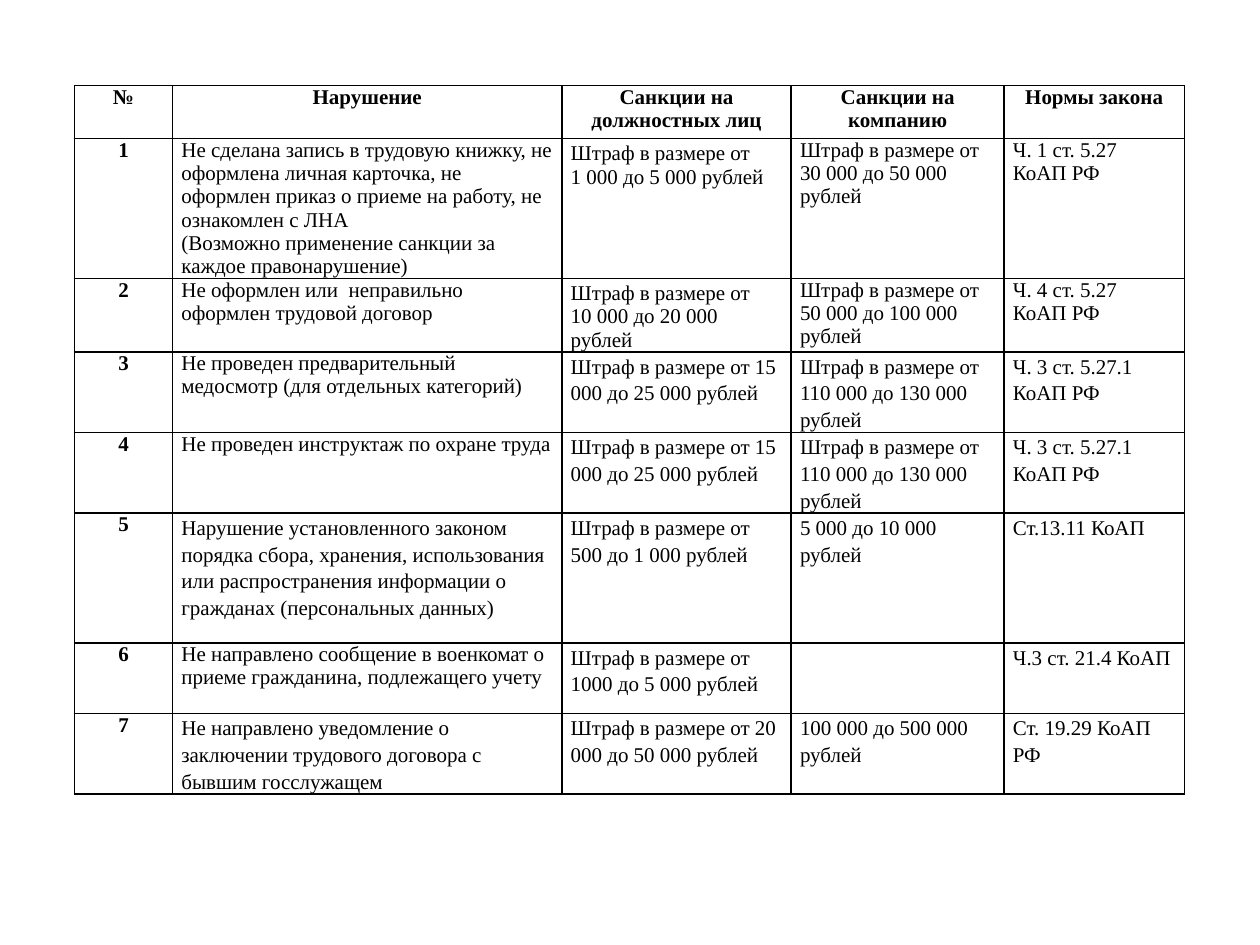
from dataclasses import dataclass

import pptx
import pptx.dml.color
import pptx.enum.text
import pptx.oxml
import pptx.oxml.ns
import pptx.util
from pptx.util import Inches

BLACK = pptx.dml.color.RGBColor(0x00, 0x00, 0x00)
FONT = "Times New Roman"
FONT_SIZE = pptx.util.Pt(12)
LOOSE_SPACING = 1.15
BORDER = pptx.util.Pt(1)
CENTER = pptx.enum.text.PP_ALIGN.CENTER

HEADERS = ("№", "Нарушение", "Санкции на должностных лиц",
           "Санкции на компанию", "Нормы закона")
COLUMN_WIDTHS = (0.78, 3.09, 1.82, 1.69, 1.43)
HEADER_HEIGHT = 0.42

# Columns whose first paragraph has the wider line spacing
OFFICIALS_ONLY = (2,)
SANCTIONS_AND_LAW = (2, 3, 4)
ALL_TEXT = (1, 2, 3, 4)


@dataclass(frozen=True)
class Violation:
    height: float
    loose_columns: tuple[int, ...]
    description: str
    officials: str
    company: str
    law: str


VIOLATIONS = (
    Violation(1.11, OFFICIALS_ONLY,
              "Не сделана запись в трудовую книжку, не оформлена личная карточка, "
              "не оформлен приказ о приеме на работу, не ознакомлен с ЛНА\n"
              "(Возможно применение санкции за каждое правонарушение)",
              "Штраф в размере от\n1 000 до 5 000 рублей",
              "Штраф в размере от 30 000 до 50 000 рублей",
              "Ч. 1 ст. 5.27 КоАП РФ"),
    Violation(0.58, OFFICIALS_ONLY,
              "Не оформлен или  неправильно оформлен трудовой договор",
              "Штраф в размере от\n10 000 до 20 000 рублей",
              "Штраф в размере от 50 000 до 100 000 рублей",
              "Ч. 4 ст. 5.27 КоАП РФ"),
    Violation(0.64, SANCTIONS_AND_LAW,
              "Не проведен предварительный медосмотр (для отдельных категорий)",
              "Штраф в размере от 15 000 до 25 000 рублей",
              "Штраф в размере от 110 000 до 130 000 рублей",
              "Ч. 3 ст. 5.27.1 КоАП РФ"),
    Violation(0.64, SANCTIONS_AND_LAW,
              "Не проведен инструктаж по охране труда",
              "Штраф в размере от 15 000 до 25 000 рублей",
              "Штраф в размере от 110 000 до 130 000 рублей",
              "Ч. 3 ст. 5.27.1 КоАП РФ"),
    Violation(1.03, ALL_TEXT,
              "Нарушение установленного законом порядка сбора, хранения, использования "
              "или распространения информации о гражданах (персональных данных)",
              "Штраф в размере от 500 до 1 000 рублей",
              "5 000 до 10 000 рублей",
              "Ст.13.11 КоАП"),
    Violation(0.56, SANCTIONS_AND_LAW,
              "Не направлено сообщение в военкомат о приеме гражданина, подлежащего учету",
              "Штраф в размере от 1000 до 5 000 рублей",
              "",
              "Ч.3 ст. 21.4 КоАП"),
    Violation(0.64, ALL_TEXT,
              "Не направлено уведомление о заключении трудового договора "
              "с бывшим госслужащем",
              "Штраф в размере от 20 000 до 50 000 рублей",
              "100 000 до 500 000 рублей",
              "Ст. 19.29 КоАП РФ"),
)


def set_borders(cell) -> None:
    tc_pr = cell._tc.get_or_add_tcPr()
    for index, side in enumerate(("lnL", "lnR", "lnT", "lnB")):
        tc_pr.insert(index, pptx.oxml.parse_xml(
            f'<a:{side} {pptx.oxml.ns.nsdecls("a")} w="{BORDER}">'
            f'<a:solidFill><a:srgbClr val="{BLACK}"/></a:solidFill></a:{side}>'))


def fill_cell(cell, text: str, heading: bool, loose: bool) -> None:
    cell.margin_left = cell.margin_right = Inches(0.07)
    cell.margin_top = cell.margin_bottom = 0
    cell.fill.background()
    set_borders(cell)
    tf = cell.text_frame
    tf.text = text
    if loose:
        tf.paragraphs[0].line_spacing = LOOSE_SPACING
    for p in tf.paragraphs:
        if heading:
            p.alignment = CENTER
        for r in p.runs:
            r.font.name = FONT
            r.font.size = FONT_SIZE
            r.font.bold = heading
            r.font.color.rgb = BLACK


def add_violations_table(slide) -> None:
    heights = [HEADER_HEIGHT] + [v.height for v in VIOLATIONS]
    table = slide.shapes.add_table(
        len(heights), len(HEADERS), Inches(0.59), Inches(0.68),
        Inches(sum(COLUMN_WIDTHS)), Inches(sum(heights))).table
    table.first_row = table.horz_banding = False
    for column, width in zip(table.columns, COLUMN_WIDTHS):
        column.width = Inches(width)
    for row, height in zip(table.rows, heights):
        row.height = Inches(height)

    for col, header in enumerate(HEADERS):
        fill_cell(table.cell(0, col), header, heading=True, loose=False)
    for number, v in enumerate(VIOLATIONS, start=1):
        texts = (str(number), v.description, v.officials, v.company, v.law)
        for col, text in enumerate(texts):
            fill_cell(table.cell(number, col), text,
                      heading=col == 0, loose=col in v.loose_columns)


def main() -> None:
    prs = pptx.Presentation()
    prs.slide_width, prs.slide_height = Inches(10), Inches(7.5)
    slide = prs.slides.add_slide(prs.slide_layouts[6])
    add_violations_table(slide)
    prs.save("out.pptx")


if __name__ == "__main__":
    main()
